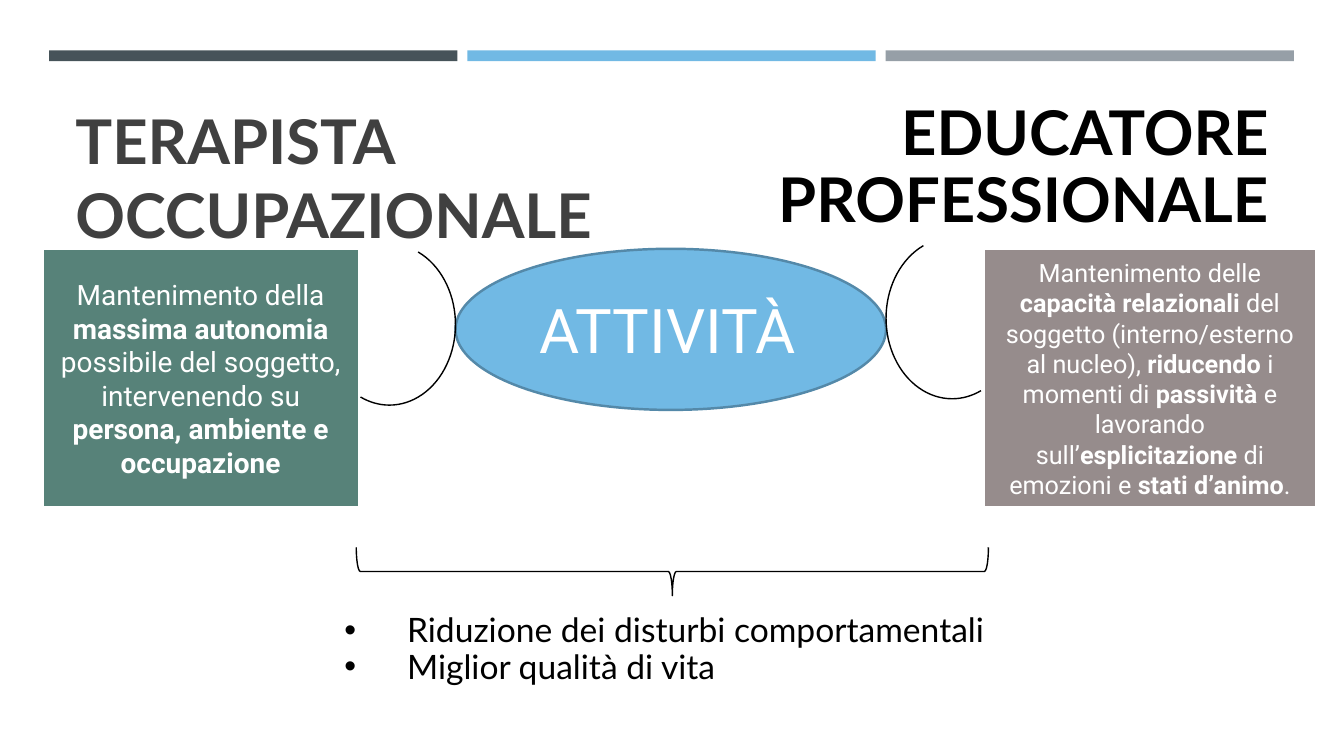
from pptx import Presentation
from pptx.dml.color import RGBColor
from pptx.enum.shapes import MSO_SHAPE
from pptx.enum.text import MSO_ANCHOR, PP_ALIGN
from pptx.oxml import parse_xml
from pptx.oxml.ns import nsdecls
from pptx.util import Cm, Pt

RECT, ELLIPSE = MSO_SHAPE.RECTANGLE, MSO_SHAPE.OVAL
ARC, BRACE = MSO_SHAPE.ARC, MSO_SHAPE.LEFT_BRACE
MIDDLE = MSO_ANCHOR.MIDDLE
LEFT, CENTER, RIGHT = PP_ALIGN.LEFT, PP_ALIGN.CENTER, PP_ALIGN.RIGHT

BLACK = RGBColor(0x00, 0x00, 0x00)
WHITE = RGBColor(0xFF, 0xFF, 0xFF)
CHARCOAL = RGBColor(0x40, 0x40, 0x40)
SLATE = RGBColor(0x46, 0x53, 0x59)
SKY = RGBColor(0x71, 0xB9, 0xE4)
SKY_EDGE = RGBColor(0x54, 0x89, 0xA9)
STEEL = RGBColor(0x96, 0x9F, 0xA7)
GREEN = RGBColor(0x57, 0x82, 0x79)
TAUPE = RGBColor(0x96, 0x8C, 0x8C)


def cm_box(*lengths):
    return [Cm(length) for length in lengths]


def add_part(slide, kind, box, fill=None, line=None, width=1):
    part = slide.shapes.add_shape(kind, *cm_box(*box))
    part.shadow.inherit = False
    if fill is None:
        part.fill.background()
    else:
        part.fill.solid()
        part.fill.fore_color.rgb = fill
    if line is None:
        part.line.fill.background()
    else:
        part.line.color.rgb = line
        part.line.width = Pt(width)
    return part


def add_run(paragraph, text, color, **formats):
    run = paragraph.add_run()
    run.text = text
    run.font.color.rgb = color
    for name, value in formats.items():
        setattr(run.font, name, value)


def add_label(slide, box):
    frame = slide.shapes.add_textbox(*cm_box(*box)).text_frame
    frame.word_wrap = True
    return frame


# Three coloured bars along the top
def add_bars(slide, box):
    left, top, width, height = box
    gap = 0.25
    bar_width = (width - 2 * gap) / 3
    for i, color in enumerate((SLATE, SKY, STEEL)):
        bar_box = (left + i * (bar_width + gap), top, bar_width, height)
        add_part(slide, RECT, bar_box, color)


# Heading of one profession
def add_heading(slide, box, lines, color, align, spacing):
    heading = add_label(slide, box).paragraphs[0]
    heading.alignment = align
    heading.line_spacing = spacing
    for i, line in enumerate(lines):
        if i:
            heading.add_line_break()
        add_run(heading, line, color, name="Lato", size=Pt(44), bold=True)


# Goal card: words between asterisks are bold
def add_goal(slide, box, text, size, fill):
    card = add_part(slide, RECT, box, fill, WHITE, 2)
    card.text_frame.word_wrap = True
    card.text_frame.vertical_anchor = MIDDLE
    goal = card.text_frame.paragraphs[0]
    goal.alignment = CENTER
    for i, words in enumerate(text.split("*")):
        add_run(goal, words, WHITE, name="Roboto", size=Pt(size), bold=i % 2 == 1)


# Central ellipse, with an arc touching each side
def add_activity(slide, box):
    left, top, width, height = box
    activity = add_part(slide, ELLIPSE, box, SKY, SKY_EDGE, 1.75)
    activity.text_frame.vertical_anchor = MIDDLE
    title = activity.text_frame.paragraphs[0]
    title.alignment = CENTER
    for text, size in (("ATTIVITÀ", 44), (" ", 18)):
        add_run(title, text, WHITE, name="Roboto", size=Pt(size))

    arc_width = 3.33
    for arc_left, rise, flipped in ((left - arc_width, 0.12, False),
                                    (left + width, 0.28, True)):
        arc = add_part(slide, ARC, (arc_left, top - rise, arc_width, height), line=BLACK)
        arc.adjustments[0], arc.adjustments[1] = 174.959, 67.054
        if flipped:
            arc._element.spPr.xfrm.set("flipH", "1")


# Brace pointing down to the shared outcomes
def add_outcomes(slide, box, outcomes):
    left, top, width, height = box
    depth = 1.22
    brace_box = (left + (width - depth) / 2, top + (depth - width) / 2, depth, width)
    brace = add_part(slide, BRACE, brace_box, line=BLACK)
    brace.rotation = 270

    offset = 1.55
    frame = add_label(slide, (left - 0.55, top + offset, 24, height - offset))
    for i, text in enumerate(outcomes):
        item = frame.add_paragraph() if i else frame.paragraphs[0]
        item.line_spacing = 0.9
        add_run(item, text, BLACK, name="Lato", size=Pt(24))
        properties = item._p.get_or_add_pPr()
        properties.set("marL", str(Cm(1.58)))
        properties.set("indent", str(-Cm(1.58)))
        properties.append(parse_xml(f'<a:buFont {nsdecls("a")} typeface="Arial"/>'))
        properties.append(parse_xml(f'<a:buChar {nsdecls("a")} char="•"/>'))


def main():
    prs = Presentation()
    prs.slide_width, prs.slide_height = Cm(33.87), Cm(19.05)
    slide = prs.slides.add_slide(prs.slide_layouts[6])

    add_bars(slide, (1.24, 1.27, 31.37, 0.27))
    add_heading(slide, (1.65, 2.46, 15.29, 4.6),
                ["TERAPISTA OCCUPAZIONALE"], CHARCOAL, LEFT, 1.0)
    add_heading(slide, (16.94, 2.46, 15.29, 4.6),
                ["EDUCATORE", "PROFESSIONALE"], BLACK, RIGHT, 0.9)
    add_activity(slide, (11.48, 6.27, 10.85, 4.06))
    add_goal(slide, (1.07, 6.27, 7.98, 6.53),
             "Mantenimento della *massima autonomia* possibile del soggetto, "
             "intervenendo su *persona, ambiente e occupazione*", 20, GREEN)
    add_goal(slide, (24.79, 6.27, 8.38, 6.53),
             "Mantenimento delle *capacità relazionali *del soggetto "
             "(interno/esterno al nucleo), *riducendo *i momenti di *passività* "
             "e lavorando sull’*esplicitazione* di emozioni e *stati d’animo*.",
             18, TAUPE)
    add_outcomes(slide, (8.98, 13.79, 15.93, 5.2),
                 ["Riduzione dei disturbi comportamentali", "Miglior qualità di vita"])
    prs.save("out.pptx")


if __name__ == "__main__":
    main()
